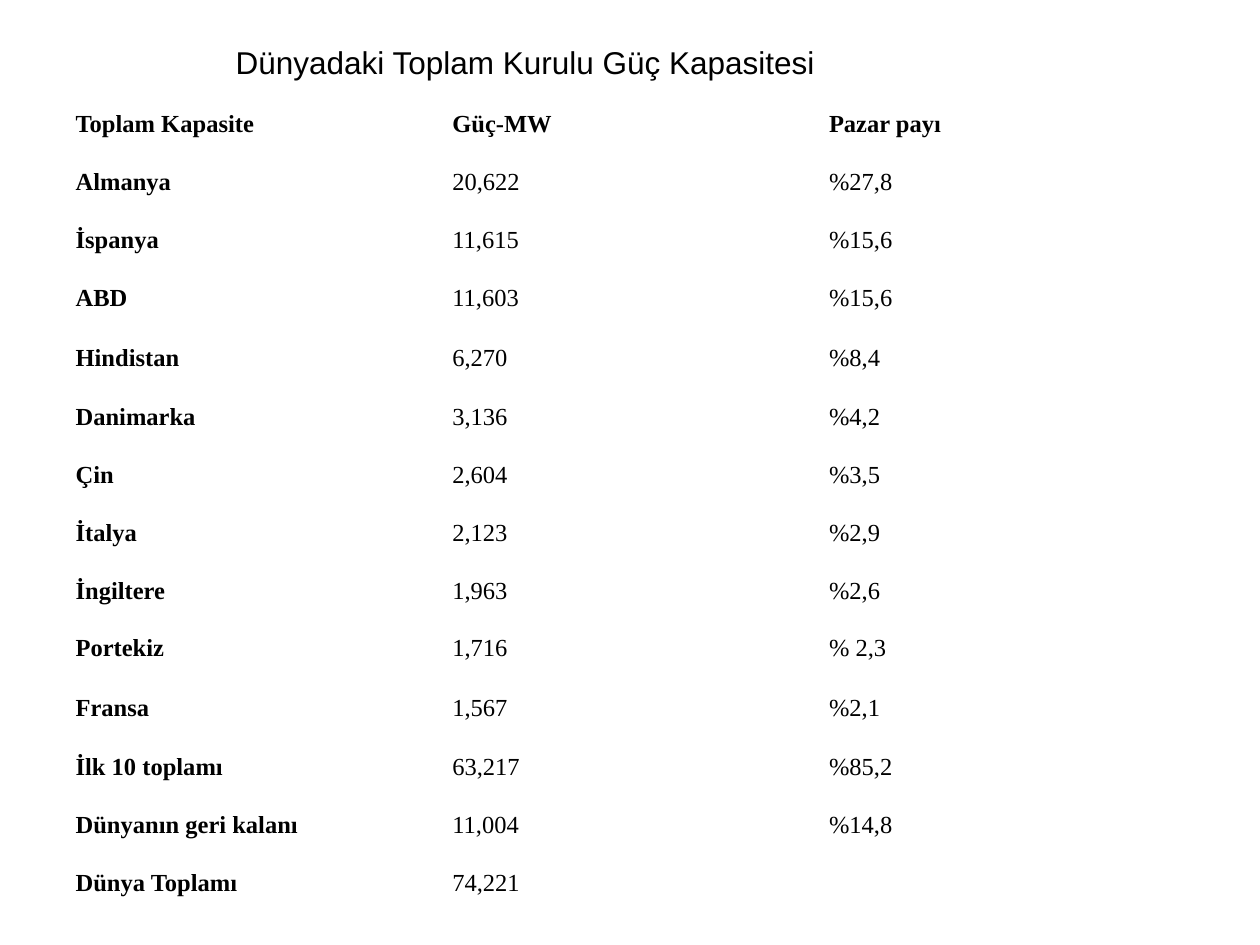
from pptx import Presentation
from pptx.dml.color import RGBColor
from pptx.enum.text import MSO_ANCHOR, MSO_AUTO_SIZE, PP_ALIGN
from pptx.util import Inches, Pt

COLORS = {"text": "000000"}
TITLE = {"name": "Arial", "size": Pt(18), "bold": False}
BODY = {"name": "Times New Roman", "size": Pt(14), "bold": False}
STRONG = {**BODY, "bold": True}

COL_WIDTH = 2.99
ROW_HEIGHT, TALL_ROW_HEIGHT = 0.46, 0.48
TALL_ROWS = ("Hindistan", "Fransa")
CELL_MARGIN = Inches(0.01)

ROWS = [
    ("Toplam Kapasite", "Güç-MW", "Pazar payı"),
    ("Almanya", "20,622", "%27,8"),
    ("İspanya", "11,615", "%15,6"),
    ("ABD", "11,603", "%15,6"),
    ("Hindistan", "6,270", "%8,4"),
    ("Danimarka", "3,136", "%4,2"),
    ("Çin", "2,604", "%3,5"),
    ("İtalya", "2,123", "%2,9"),
    ("İngiltere", "1,963", "%2,6"),
    ("Portekiz", "1,716", "% 2,3"),
    ("Fransa", "1,567", "%2,1"),
    ("İlk 10 toplamı", "63,217", "%85,2"),
    ("Dünyanın geri kalanı", "11,004", "%14,8"),
    ("Dünya Toplamı", "74,221", ""),
]


def write(tf, text, style):
    """Put one left-aligned, formatted run in a text frame."""
    p = tf.paragraphs[0]
    p.alignment = PP_ALIGN.LEFT
    r = p.add_run()
    r.text = text
    for key, value in style.items():
        setattr(r.font, key, value)
    r.font.color.rgb = RGBColor.from_string(COLORS["text"])


def add_title(s, text, left, top, width, height):
    sp = s.shapes.title
    sp.left, sp.top = Inches(left), Inches(top)
    sp.width, sp.height = Inches(width), Inches(height)
    tf = sp.text_frame
    tf.word_wrap = True
    tf.auto_size = MSO_AUTO_SIZE.NONE
    tf.vertical_anchor = MSO_ANCHOR.TOP
    write(tf, text, TITLE)


def fill_cell(cell, text, style):
    cell.fill.background()
    cell.vertical_anchor = MSO_ANCHOR.MIDDLE
    for side in ("left", "right", "top", "bottom"):
        setattr(cell, f"margin_{side}", CELL_MARGIN)
    if text:
        write(cell.text_frame, text, style)


def add_table(s, rows, left, top):
    heights = [TALL_ROW_HEIGHT if row[0] in TALL_ROWS else ROW_HEIGHT
               for row in rows]
    n_cols = len(rows[0])
    table = s.shapes.add_table(
        len(rows), n_cols, Inches(left), Inches(top),
        Inches(n_cols * COL_WIDTH), Inches(sum(heights))).table
    table.first_row = table.horz_banding = False
    for col in table.columns:
        col.width = Inches(COL_WIDTH)
    for i, (row, height) in enumerate(zip(rows, heights)):
        table.rows[i].height = Inches(height)
        for j, text in enumerate(row):
            # Header row and country column are bold
            style = STRONG if i == 0 or j == 0 else BODY
            fill_cell(table.cell(i, j), text, style)


def main():
    prs = Presentation()
    prs.slide_width, prs.slide_height = Inches(10), Inches(7.5)
    s = prs.slides.add_slide(prs.slide_layouts.get_by_name("Title Only"))
    add_title(s, "Dünyadaki Toplam Kurulu Güç Kapasitesi", 1.77, 0.29, 5.75, 0.4)
    add_table(s, ROWS, 0.59, 0.76)
    prs.save("out.pptx")


if __name__ == "__main__":
    main()
